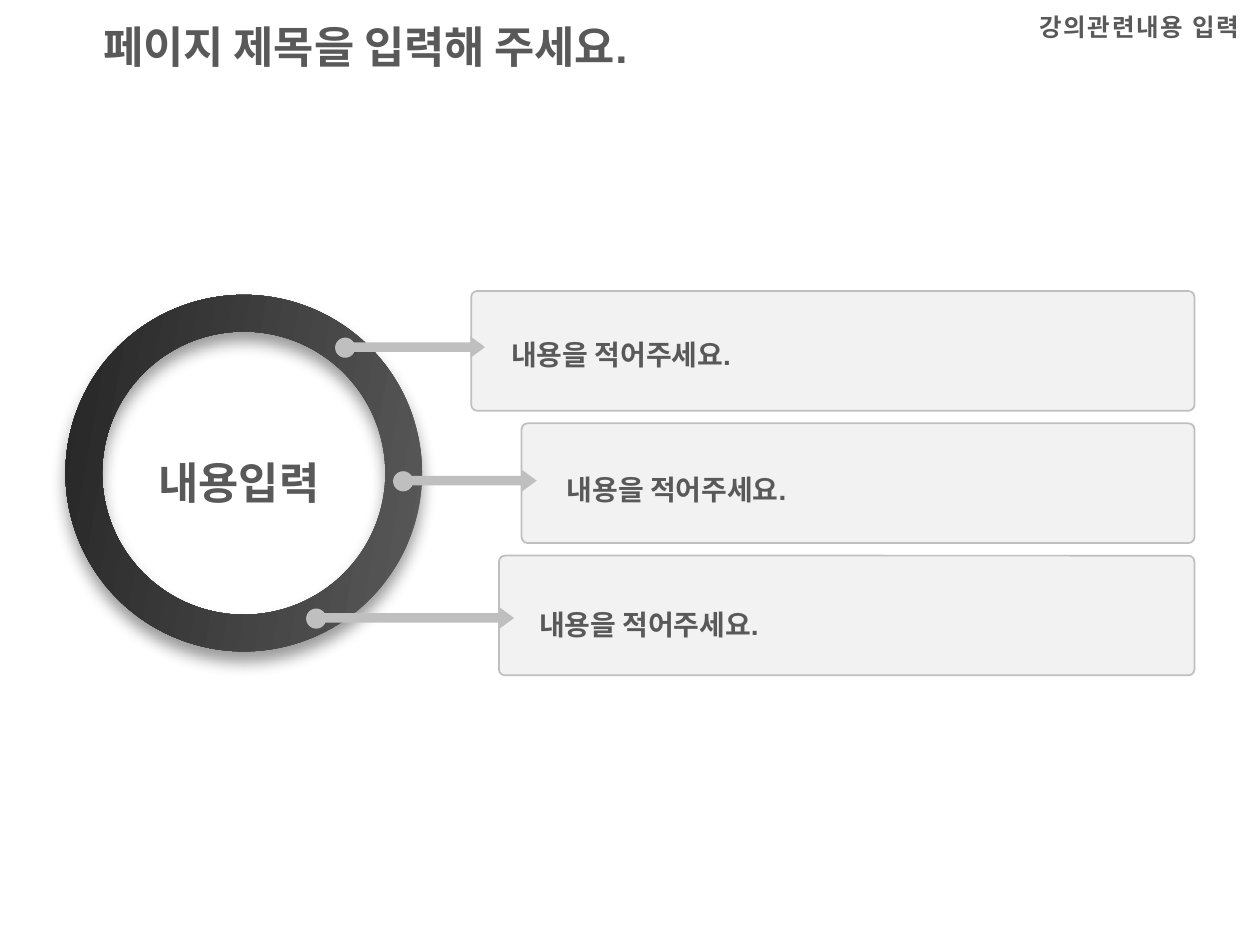
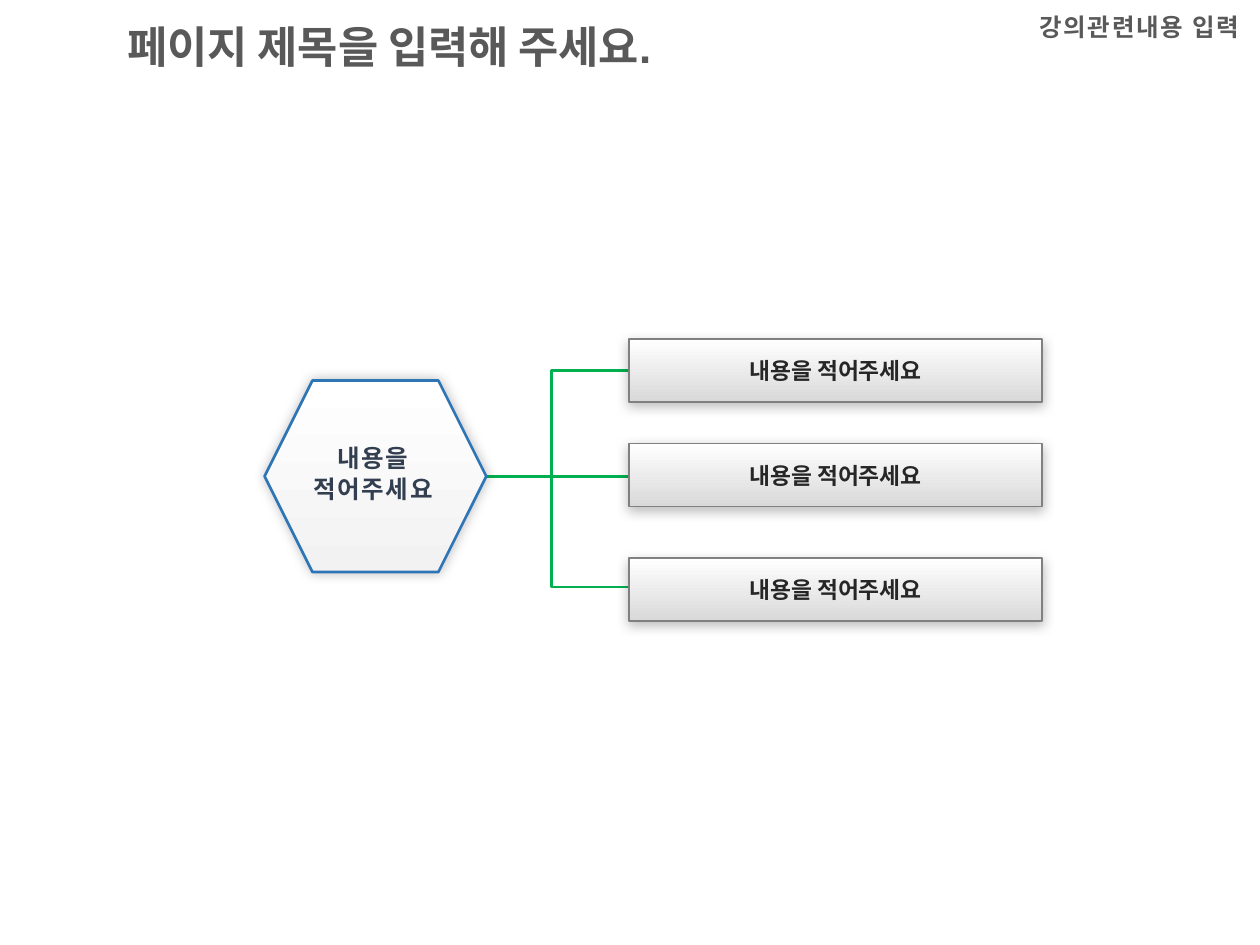
from dataclasses import dataclass

from lxml import etree
from pptx import Presentation
from pptx.dml.color import RGBColor
from pptx.enum.shapes import MSO_CONNECTOR, MSO_SHAPE
from pptx.enum.text import MSO_ANCHOR, MSO_AUTO_SIZE, PP_ALIGN
from pptx.oxml.ns import qn
from pptx.presentation import Presentation as PresentationType
from pptx.shapes.autoshape import Shape
from pptx.slide import Slide
from pptx.util import Inches, Pt

LEFT, CENTER = PP_ALIGN.LEFT, PP_ALIGN.CENTER
MIDDLE = MSO_ANCHOR.MIDDLE
GROW = MSO_AUTO_SIZE.SHAPE_TO_FIT_TEXT
STRAIGHT, ELBOW = MSO_CONNECTOR.STRAIGHT, MSO_CONNECTOR.ELBOW
RECTANGLE, ROUNDED, DONUT = MSO_SHAPE.RECTANGLE, MSO_SHAPE.ROUNDED_RECTANGLE, MSO_SHAPE.DONUT
ARROW, OVAL, HEXAGON = MSO_SHAPE.RIGHT_ARROW, MSO_SHAPE.OVAL, MSO_SHAPE.HEXAGON

FONT = "Arial"
TITLE = "페이지 제목을 입력해 주세요."
HEADER = "강의관련내용 입력"
COLORS = {
    "text": "595959",
    "panel": "F2F2F2",
    "marker": "BFBFBF",
    "ring_dark": "262626",
    "white": "FFFFFF",
    "branch": "00B050",
    "hexagon_line": "2E75B6",
    "hexagon_text": "333F50",
    "box_shade": "D9D9D9",
    "box_line": "808080",
    "box_text": "262626",
    "shadow": "000000",
}


@dataclass(frozen=True)
class Box:
    left: float
    top: float
    width: float
    height: float


@dataclass(frozen=True)
class TextStyle:
    size: float
    color: str = "text"
    align: PP_ALIGN = LEFT
    line_spacing: float | Pt | None = None
    tracking: float = 0


@dataclass(frozen=True)
class Shadow:
    opacity: int
    blur: float
    distance: float
    angle: int


@dataclass(frozen=True)
class PanelRow:
    panel_left: float
    text_left: float
    arrow: Box
    dot_left: float


TITLE_STYLE = TextStyle(25, line_spacing=0.9)
HEADER_STYLE = TextStyle(14, tracking=1)
RING_STYLE = TextStyle(25, line_spacing=1.5)
PANEL_STYLE = TextStyle(16, line_spacing=1.5)
HEXAGON_STYLE = TextStyle(14, "hexagon_text", CENTER, Pt(18), 1)
BOX_STYLE = TextStyle(13, "box_text", CENTER)

PANEL_RIGHT, PANEL_TOP, PANEL_PITCH, PANEL_HEIGHT = 9.48, 2.31, 1.05, 0.95
PANEL_TEXT_TOP, PANEL_TEXT_PITCH = 2.5, 1.07
DOT_SIZE = 0.16
PANEL_ROWS = (
    PanelRow(3.74, 3.96, Box(2.75, 2.67, 1.1, 0.17), 2.66),
    PanelRow(4.14, 4.4, Box(3.26, 3.73, 1, 0.17), 3.12),
    PanelRow(3.96, 4.18, Box(2.5, 4.82, 1.58, 0.17), 2.43),
)
BOX_TOPS = (2.69, 3.52, 4.43)
BRANCHES = (
    (ELBOW, 3.48, 5.27, 4.66),
    (ELBOW, 3.48, 5.27, 2.94),
    (STRAIGHT, 3.66, 5.3, 3.78),
)
BRANCH_START = 3.78


def rgb(name: str) -> RGBColor:
    """Return the named palette colour."""
    return RGBColor.from_string(COLORS[name])


def lengths(box: Box) -> tuple[Inches, ...]:
    """Convert a box to slide lengths."""
    return tuple(Inches(value) for value in (box.left, box.top, box.width, box.height))


def write_text(shape: Shape, text: str, style: TextStyle) -> None:
    """Fill a shape with bold text, one paragraph a line."""
    frame = shape.text_frame
    frame.word_wrap = True
    frame.text = text
    for paragraph in frame.paragraphs:
        paragraph.alignment = style.align
        if style.line_spacing is not None:
            paragraph.line_spacing = style.line_spacing
        font = paragraph.font
        font.name, font.size, font.bold = FONT, Pt(style.size), True
        font.color.rgb = rgb(style.color)
        if style.tracking:
            properties = paragraph._p.pPr.find(qn("a:defRPr"))
            properties.set("spc", str(int(style.tracking * 100)))


def add_text(slide: Slide, box: Box, text: str, style: TextStyle) -> None:
    """Add a text box that grows with its text."""
    text_box = slide.shapes.add_textbox(*lengths(box))
    write_text(text_box, text, style)
    text_box.text_frame.auto_size = GROW


def add_figure(slide: Slide, kind: MSO_SHAPE, box: Box, fill: str,
               adjustments: tuple[float, ...] = (), line: str | None = None,
               line_width: float = 1) -> Shape:
    """Add a flat preset shape without a shadow."""
    shape = slide.shapes.add_shape(kind, *lengths(box))
    shape.shadow.inherit = False
    for index, value in enumerate(adjustments):
        shape.adjustments[index] = value
    shape.fill.solid()
    shape.fill.fore_color.rgb = rgb(fill)
    if line:
        shape.line.color.rgb = rgb(line)
        shape.line.width = Pt(line_width)
    else:
        shape.line.fill.background()
    return shape


def apply_gradient(shape: Shape, start: str, end: str, angle: int) -> None:
    """Give a shape a two-colour gradient at a clockwise angle."""
    shape.fill.gradient()
    shape.fill.gradient_angle = 360 - angle
    for stop, color in zip(shape.fill.gradient_stops, (start, end)):
        stop.color.rgb = rgb(color)


def apply_shadow(shape: Shape, shadow: Shadow) -> None:
    """Give a shape an outer shadow."""
    effects = shape._element.spPr.find(qn("a:effectLst"))
    outer = etree.SubElement(
        effects, qn("a:outerShdw"), blurRad=str(Pt(shadow.blur)),
        dist=str(Pt(shadow.distance)), dir=str(shadow.angle * 60000),
        algn="ctr", rotWithShape="0")
    color = etree.SubElement(outer, qn("a:srgbClr"), val=COLORS["shadow"])
    etree.SubElement(color, qn("a:alpha"), val=str(shadow.opacity * 1000))


def add_branch(slide: Slide, kind: MSO_CONNECTOR, left: float, right: float, end: float) -> None:
    """Add a connector from the hexagon to a box."""
    connector = slide.shapes.add_connector(
        kind, Inches(left), Inches(BRANCH_START), Inches(right), Inches(end))
    connector.line.color.rgb = rgb("branch")
    connector.line.width = Pt(1.5)
    etree.SubElement(connector._element.spPr, qn("a:effectLst"))


def add_page(presentation: PresentationType, title_box: Box) -> Slide:
    """Add a slide with the shared title and corner header."""
    slide = presentation.slides.add_slide(presentation.slide_layouts[5])
    title = slide.shapes.title
    title.left, title.top, title.width, title.height = lengths(title_box)
    write_text(title, TITLE, TITLE_STYLE)
    title.text_frame.vertical_anchor = MIDDLE
    add_text(slide, Box(8.15, 0.05, 2.11, 0.34), HEADER, HEADER_STYLE)
    return slide


def add_panel_row(slide: Slide, index: int, row: PanelRow) -> None:
    """Add a panel with the arrow and dot that tie it to the ring."""
    panel = Box(row.panel_left, PANEL_TOP + index * PANEL_PITCH,
                PANEL_RIGHT - row.panel_left, PANEL_HEIGHT)
    add_figure(slide, ROUNDED, panel, "panel", (0.05,), "marker")
    add_figure(slide, ARROW, row.arrow, "marker", (0.44, 0.68))
    add_figure(slide, OVAL, Box(row.dot_left, row.arrow.top + 0.01, DOT_SIZE, DOT_SIZE), "marker")
    text_top = PANEL_TEXT_TOP + index * PANEL_TEXT_PITCH
    add_text(slide, Box(row.text_left, text_top, 5.5, 0.45), "내용을 적어주세요.", PANEL_STYLE)


def build_ring_slide(presentation: PresentationType) -> None:
    """Build the ring with three panels."""
    slide = add_page(presentation, Box(0.72, 0, 7.27, 0.78))
    ring = add_figure(slide, DONUT, Box(0.52, 2.34, 2.83, 2.83), "text", (0.103,))
    apply_gradient(ring, "text", "ring_dark", 190)
    apply_shadow(ring, Shadow(40, 9, 6, 90))
    add_text(slide, Box(1.16, 3.36, 1.75, 0.65), "내용입력", RING_STYLE)
    for index, row in enumerate(PANEL_ROWS):
        add_panel_row(slide, index, row)


def build_branch_slide(presentation: PresentationType) -> None:
    """Build the hexagon that branches into three boxes."""
    slide = add_page(presentation, Box(0.91, 0, 8.62, 0.78))
    for branch in BRANCHES:
        add_branch(slide, *branch)
    hexagon = add_figure(slide, HEXAGON, Box(2.1, 3.02, 1.76, 1.52), "white",
                         line="hexagon_line", line_width=1.5)
    apply_gradient(hexagon, "white", "panel", 90)
    apply_shadow(hexagon, Shadow(25, 7, 0, 0))
    add_text(slide, Box(2.1, 3.45, 1.72, 0.61), "내용을\n적어주세요", HEXAGON_STYLE)
    for top in BOX_TOPS:
        box = add_figure(slide, RECTANGLE, Box(4.99, top, 3.28, 0.5), "white", line="box_line")
        apply_gradient(box, "white", "box_shade", 90)
        apply_shadow(box, Shadow(25, 7, 2, 90))
        write_text(box, "내용을 적어주세요", BOX_STYLE)
        box.text_frame.vertical_anchor = MIDDLE


def main() -> None:
    """Build and save the presentation."""
    presentation = Presentation()
    presentation.slide_width, presentation.slide_height = Inches(10), Inches(7.5)
    build_ring_slide(presentation)
    build_branch_slide(presentation)
    presentation.save("out.pptx")


if __name__ == "__main__":
    main()
